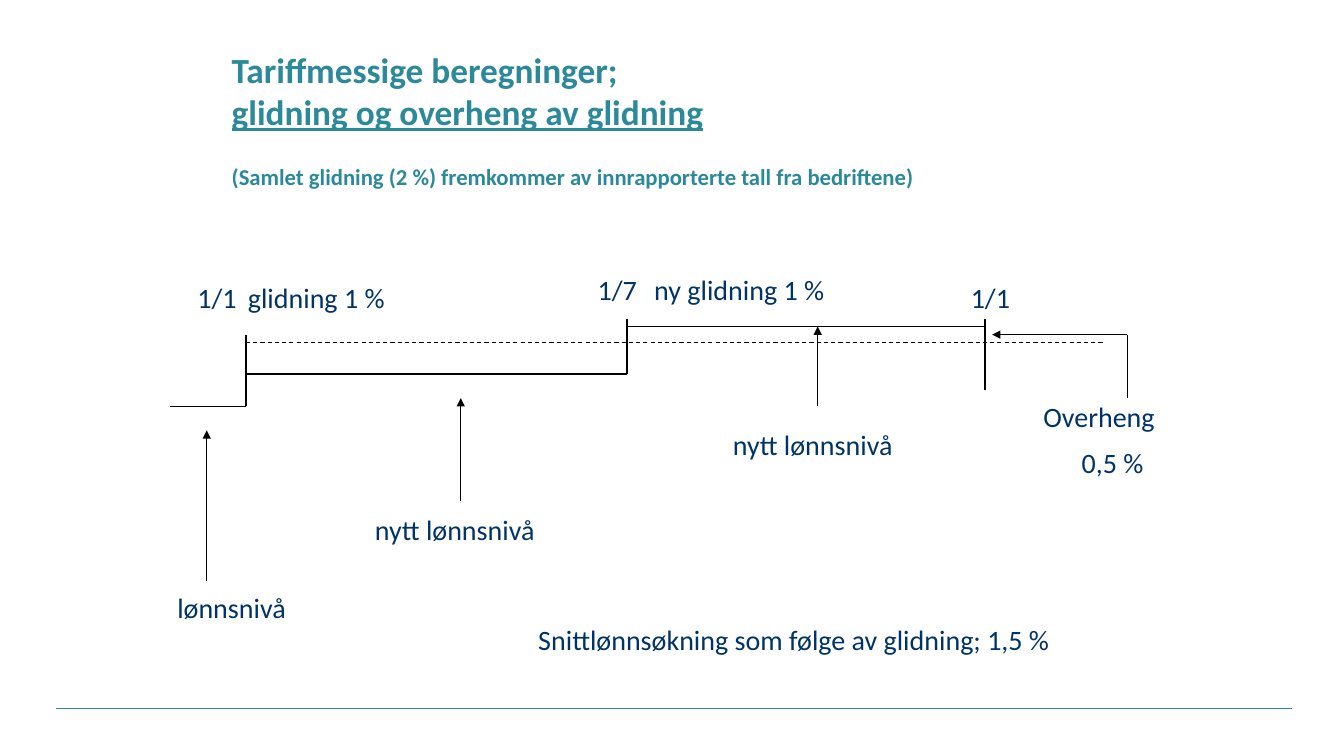
from typing import NamedTuple

from lxml.etree import SubElement
from pptx import Presentation
from pptx.dml.color import RGBColor
from pptx.enum.dml import MSO_LINE
from pptx.enum.shapes import MSO_CONNECTOR
from pptx.enum.text import MSO_AUTO_SIZE
from pptx.oxml.ns import qn
from pptx.slide import Slide
from pptx.util import Emu, Pt

PX = 9144
FONT = "Calibri"
TEAL = RGBColor(0x2B, 0x89, 0x9A)
NAVY = RGBColor(0x00, 0x33, 0x66)
BLACK = RGBColor(0x00, 0x00, 0x00)

JANUARY, JULY, NEXT_JANUARY = 244, 622, 977
START_LEVEL, FIRST_LEVEL, AVERAGE_LEVEL, SECOND_LEVEL = 403, 371, 340, 324
OVERHANG_X, OVERHANG_Y = 1118, 332


class Line(NamedTuple):
    x1: int
    y1: int
    x2: int
    y2: int
    width: float = 1
    color: RGBColor = BLACK
    arrow: bool = False
    dashed: bool = False


class Label(NamedTuple):
    text: str
    left: int
    top: int
    width: int
    height: int = 56


class Heading(NamedTuple):
    text: str
    size: float
    underline: bool = False
    space_before: float = 0


LINES = [
    Line(56, 703, 1281, 703, color=TEAL),
    Line(JULY, FIRST_LEVEL, JULY, AVERAGE_LEVEL),
    Line(JULY, SECOND_LEVEL, NEXT_JANUARY, SECOND_LEVEL),
    Line(JANUARY, 332, JANUARY, START_LEVEL),
    Line(JULY, 316, JULY, AVERAGE_LEVEL),
    Line(NEXT_JANUARY, 387, NEXT_JANUARY, 316),
    Line(JANUARY, FIRST_LEVEL, JULY, FIRST_LEVEL, width=1.5),
    Line(811, 403, 811, SECOND_LEVEL, arrow=True),
    Line(OVERHANG_X, OVERHANG_Y, 984, OVERHANG_Y, arrow=True),
    Line(OVERHANG_X, OVERHANG_Y, OVERHANG_X, 395),
    Line(JANUARY, START_LEVEL, 169, START_LEVEL),
    Line(205, 576, 205, 427, arrow=True),
    Line(457, 497, 457, 395, arrow=True),
    Line(JANUARY, AVERAGE_LEVEL, 1095, AVERAGE_LEVEL, width=0.75, dashed=True),
]

LABELS = [
    Label("1/1", 186, 261, 110),
    Label("1/7", 583, 253, 79),
    Label("glidning 1 %", 236, 261, 291),
    Label("1/1", 953, 261, 95),
    Label("Snittlønnsøkning som følge av glidning; 1,5 %", 524, 600, 646),
    Label("Overheng 0,5 %", 1025, 379, 161, 102),
    Label("lønnsnivå", 166, 568, 299),
    Label("nytt lønnsnivå", 362, 491, 307),
    Label("ny glidning 1 %", 639, 253, 276),
    Label("nytt lønnsnivå", 717, 407, 307),
]

HEADINGS = [
    Heading("Tariffmessige beregninger;", 25.2),
    Heading("glidning og overheng av glidning", 25.2, underline=True),
    Heading("(Samlet glidning (2 %) fremkommer av innrapporterte tall fra bedriftene)",
            16.2, space_before=21.5),
]


def px(length: int) -> Emu:
    """Turn a length in px into EMU."""
    return Emu(length * PX)


def draw_line(slide: Slide, line: Line) -> None:
    """Draw a straight line, with an arrowhead or dashes where asked."""
    connector = slide.shapes.add_connector(
        MSO_CONNECTOR.STRAIGHT, px(line.x1), px(line.y1), px(line.x2), px(line.y2))
    connector.line.color.rgb = line.color
    connector.line.width = Pt(line.width)
    if line.dashed:
        connector.line.dash_style = MSO_LINE.DASH
    properties = connector._element.spPr
    if line.arrow:
        SubElement(properties.find(qn("a:ln")), qn("a:tailEnd"), type="triangle")
    SubElement(properties, qn("a:effectLst"))


def draw_label(slide: Slide, label: Label) -> None:
    """Write a label with a hanging indent and fixed line spacing."""
    box = slide.shapes.add_textbox(
        px(label.left), px(label.top), px(label.width), px(label.height))
    frame = box.text_frame
    frame.word_wrap = True
    frame.auto_size = MSO_AUTO_SIZE.SHAPE_TO_FIT_TEXT
    frame.text = label.text
    paragraph = frame.paragraphs[0]
    paragraph.line_spacing = Pt(33)
    indent = paragraph._p.get_or_add_pPr()
    indent.set("marL", str(px(38)))
    indent.set("indent", str(px(-38)))
    font = paragraph.runs[0].font
    font.name, font.size = FONT, Pt(20)
    font.color.rgb = NAVY


def draw_title(slide: Slide, headings: list[Heading]) -> None:
    """Write the title lines in one box."""
    frame = slide.shapes.add_textbox(px(220), px(43), px(906), px(165)).text_frame
    frame.word_wrap = True
    frame.text = "\n".join(heading.text for heading in headings)
    for paragraph, heading in zip(frame.paragraphs, headings):
        if heading.space_before:
            paragraph.space_before = Pt(heading.space_before)
        font = paragraph.runs[0].font
        font.name, font.size, font.bold = FONT, Pt(heading.size), True
        font.underline = heading.underline
        font.color.rgb = TEAL


def main() -> None:
    """Build the slide and save it."""
    deck = Presentation()
    deck.slide_width, deck.slide_height = px(1333), px(750)
    slide = deck.slides.add_slide(deck.slide_layouts[6])
    draw_title(slide, HEADINGS)
    for line in LINES:
        draw_line(slide, line)
    for label in LABELS:
        draw_label(slide, label)
    deck.save("out.pptx")


if __name__ == "__main__":
    main()
